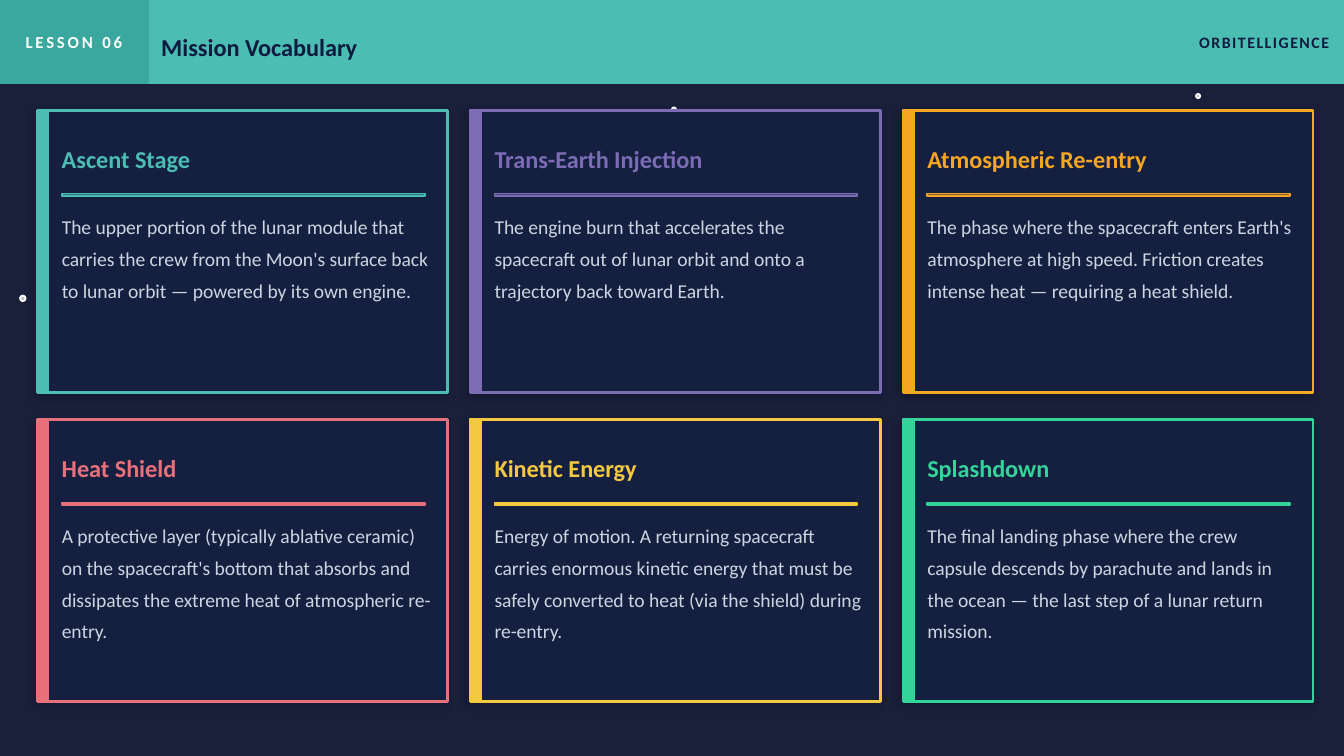
from lxml.etree import SubElement as Sub
from pptx import Presentation
from pptx.dml.color import RGBColor as Rgb
from pptx.enum.shapes import MSO_SHAPE as Kind
from pptx.enum.text import MSO_ANCHOR as Anchor, PP_ALIGN as Align
from pptx.oxml.ns import qn
from pptx.util import Pt

PX = 4572  # EMU; 200 px to the inch
WIDE, HIGH = 2000, 1125
BAR = 124
FONT = "Calibri"
HUES = {
    "space": "1A1F3A", "card": "152040", "navy": "0D1B3E",
    "white": "FFFFFF", "body": "CBD5E1", "tag": "3AA89E",
    "teal": "4BBDB3", "violet": "7B6CB5", "orange": "F5A623",
    "coral": "E8707A", "yellow": "F5C842", "green": "34D399",
}
STARS = [(1000, 160, 6, 65), (1780, 140, 6, 60), (30, 440, 8, 70)]
TERMS = [
    ("teal", "Ascent Stage",
     "The upper portion of the lunar module that carries the crew from the "
     "Moon's surface back to lunar orbit — powered by its own engine."),
    ("violet", "Trans-Earth Injection",
     "The engine burn that accelerates the spacecraft out of lunar orbit and "
     "onto a trajectory back toward Earth."),
    ("orange", "Atmospheric Re-entry",
     "The phase where the spacecraft enters Earth's atmosphere at high speed. "
     "Friction creates intense heat — requiring a heat shield."),
    ("coral", "Heat Shield",
     "A protective layer (typically ablative ceramic) on the spacecraft's "
     "bottom that absorbs and dissipates the extreme heat of atmospheric "
     "re-entry."),
    ("yellow", "Kinetic Energy",
     "Energy of motion. A returning spacecraft carries enormous kinetic "
     "energy that must be safely converted to heat (via the shield) during "
     "re-entry."),
    ("green", "Splashdown",
     "The final landing phase where the crew capsule descends by parachute "
     "and lands in the ocean — the last step of a lunar return mission."),
]


def hue(name):
    return Rgb.from_string(HUES[name])


def emu(box):
    return [n * PX for n in box]


def add_shape(slide, box, fill, line=None, weight=1, alpha=None,
              kind=Kind.RECTANGLE):
    """Draw a filled shape; alpha is the fill's opacity in percent."""
    shape = slide.shapes.add_shape(kind, *emu(box))
    shape.shadow.inherit = False
    shape.fill.solid()
    shape.fill.fore_color.rgb = hue(fill)
    shape.line.color.rgb = hue(line or fill)
    shape.line.width = Pt(weight)
    if alpha:
        clr = shape.fill._xPr.find(qn("a:solidFill"))[0]
        Sub(clr, qn("a:alpha"), val=str(alpha * 1000))
    return shape


def add_shadow(shape):
    glow = Sub(shape._element.spPr.find(qn("a:effectLst")), qn("a:outerShdw"),
               blurRad=str(Pt(4)), dist=str(Pt(2)), dir=str(135 * 60000),
               algn="bl", rotWithShape="0")
    clr = Sub(glow, qn("a:srgbClr"), val="000000")
    Sub(clr, qn("a:alpha"), val="18000")


def add_text(slide, box, text, size, color, bold=True, align=Align.LEFT,
             anchor=Anchor.MIDDLE, pad=(0, 0), track=0, lead=None):
    """Write one run; pad is the left and right inset, track is in points."""
    frame = slide.shapes.add_textbox(*emu(box)).text_frame
    frame.word_wrap = True
    frame.vertical_anchor = anchor
    frame.margin_left, frame.margin_right = emu(pad)
    frame.margin_top = frame.margin_bottom = 0
    para = frame.paragraphs[0]
    para.alignment = align
    if lead:
        para.line_spacing = lead
    run = para.add_run()
    run.text = text
    font = run.font
    font.name, font.size, font.bold = FONT, Pt(size), bold
    font.color.rgb = hue(color)
    if track:
        run._r.get_or_add_rPr().set("spc", str(round(track * 100)))


def add_stars(slide):
    for x, y, size, alpha in STARS:
        add_shape(slide, (x, y, size, size), "white", alpha=alpha,
                  kind=Kind.OVAL)


def add_header(slide, x, y, w, h):
    tag = (x, y, 220, h)
    add_shape(slide, (x, y, w, h), "teal")
    add_shape(slide, tag, "tag")
    add_text(slide, tag, "LESSON 06", 9, "white", align=Align.CENTER,
             track=1.5)
    # The title's text sits lower than the labels beside it
    title = (x + 240, y, 1500, h)
    add_text(slide, (title[0], y + 8, title[2], h), "Mission Vocabulary", 13,
             "navy")
    add_text(slide, (x + w - 460, y, 460, h), "ORBITELLIGENCE", 8.5, "navy",
             align=Align.RIGHT, pad=(0, 22), track=0.8)


def add_card(slide, x, y, w, h, color, term, text):
    left = x + 36
    add_shadow(add_shape(slide, (x, y, w, h), "card", color, 1.5))
    add_shape(slide, (x, y, 16, h), color)
    add_text(slide, (left, y + 24, w - 50, 96), term, 13, color)
    add_shape(slide, (left, y + 124, w - 70, 4), color, alpha=50)
    add_text(slide, (left, y + 144, w - 60, 250), text, 10.5, "body",
             bold=False, anchor=Anchor.TOP, lead=1.35)


def add_grid(slide, x, y, w, h, cols=3, gap=(34, 40)):
    rows = len(TERMS) // cols
    wide = (w - gap[0] * (cols - 1)) // cols
    high = (h - gap[1] * (rows - 1)) // rows
    for i, term in enumerate(TERMS):
        row, col = divmod(i, cols)
        add_card(slide, x + col * (wide + gap[0]), y + row * (high + gap[1]),
                 wide, high, *term)


def main():
    deck = Presentation()
    deck.slide_width, deck.slide_height = emu((WIDE, HIGH))
    slide = deck.slides.add_slide(deck.slide_layouts[6])
    slide.background.fill.solid()
    slide.background.fill.fore_color.rgb = hue("space")
    add_stars(slide)
    add_header(slide, 0, 0, WIDE, BAR)
    add_grid(slide, 56, 164, 1898, 880)
    deck.save("out.pptx")


if __name__ == "__main__":
    main()
